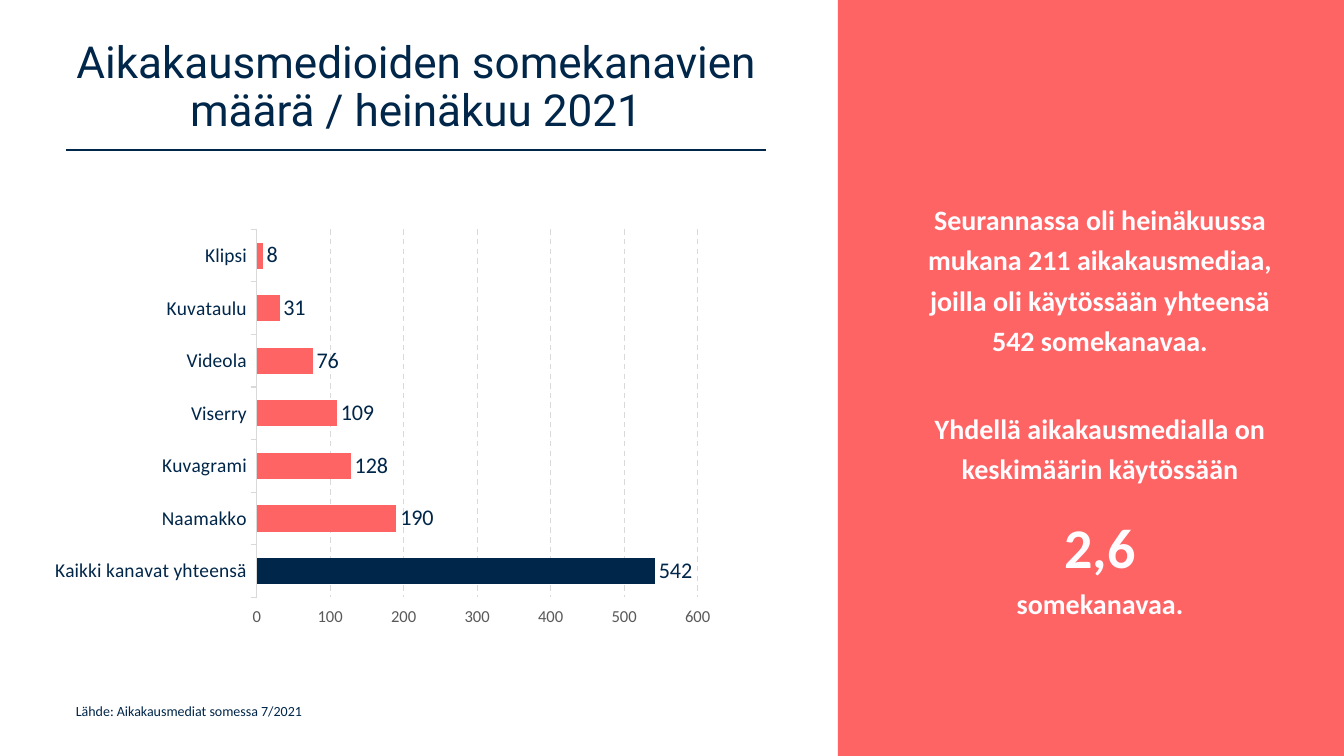
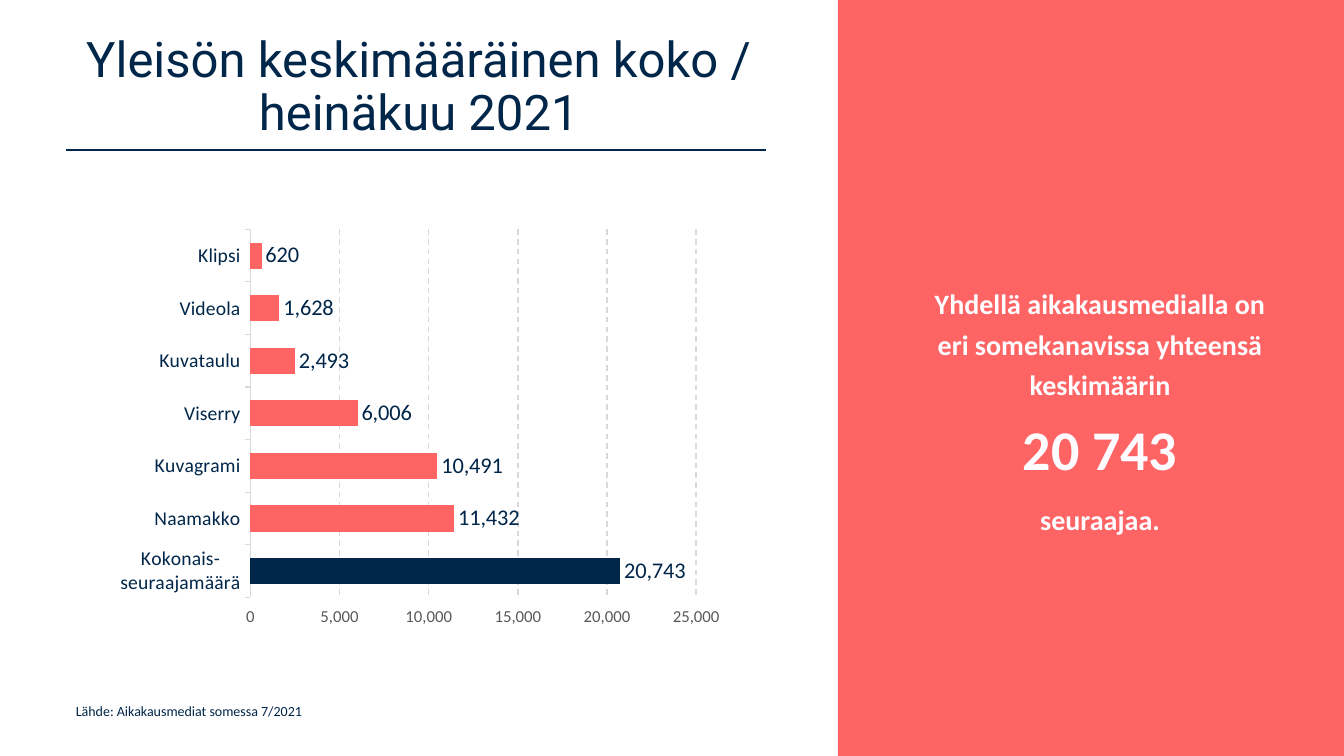
import pptx
import pptx.chart.data
import pptx.dml.color
import pptx.enum.chart
import pptx.enum.dml
import pptx.enum.shapes
import pptx.enum.text
import pptx.oxml.ns
import pptx.oxml.xmlchemy
import pptx.util

NAVY = pptx.dml.color.RGBColor(0x00, 0x26, 0x49)
CORAL = pptx.dml.color.RGBColor(0xFF, 0x64, 0x64)
PALE = pptx.dml.color.RGBColor(0xFE, 0xFC, 0xFF)
GRID = pptx.dml.color.RGBColor(0xD9, 0xD9, 0xD9)
GRAY = pptx.dml.color.RGBColor(0x59, 0x59, 0x59)

SCALE = 914400 / 100.8
PLOT_AREA = {"x": 0.25, "y": 0.09, "w": 0.57, "h": 0.84}
SOURCE = "Lähde: Aikakausmediat somessa 7/2021"


def px(length):
    return round(length * SCALE)


def apply(target, values):
    for name, value in values.items():
        setattr(target, name, value)


def set_font(font, size, color, **values):
    apply(font, {"name": "Calibri", "size": pptx.util.Pt(size), **values})
    font.color.rgb = color


class Report:
    def __init__(self):
        self.deck = pptx.Presentation()
        apply(self.deck, {"slide_width": px(1344), "slide_height": px(756)})
        self.slide = None

    def start_slide(self):
        self.slide = self.deck.slides.add_slide(self.deck.slide_layouts[6])
        self.panel(838, 0, 506, 756)
        self.rule(66, 150, 766)
        self.text(66, 698, 664, 44, [(0, [(SOURCE, 10)])], NAVY)

    def panel(self, left, top, width, height):
        shape = self.slide.shapes.add_shape(
            pptx.enum.shapes.MSO_SHAPE.RECTANGLE, px(left), px(top), px(width), px(height))
        shape.shadow.inherit = False
        shape.fill.solid()
        shape.fill.fore_color.rgb = CORAL
        shape.line.fill.background()

    def rule(self, left, top, right):
        line = self.slide.shapes.add_connector(
            pptx.enum.shapes.MSO_CONNECTOR.STRAIGHT, px(left), px(top), px(right), px(top))
        line.line.color.rgb = NAVY
        line.line.width = pptx.util.Pt(1)
        line._element.spPr.append(pptx.oxml.xmlchemy.OxmlElement("a:effectLst"))

    def text(self, left, top, width, height, paras, color, layout=None, anchor=None, **font):
        box = self.slide.shapes.add_textbox(px(left), px(top), px(width), px(height))
        frame = box.text_frame
        apply(frame, {"word_wrap": True, "vertical_anchor": anchor})
        for index, (space, spans) in enumerate(paras):
            para = frame.add_paragraph() if index else frame.paragraphs[0]
            apply(para, {"space_before": pptx.util.Pt(space), **(layout or {})})
            for words, size in spans:
                for number, part in enumerate(words.split("\n")):
                    if number:
                        para.add_line_break()
                    if part:
                        span = para.add_run()
                        span.text = part
                        set_font(span.font, size, color, **font)

    def centred(self, left, top, width, height, paras, color, spacing, **font):
        layout = {"alignment": pptx.enum.text.PP_ALIGN.CENTER, "line_spacing": spacing}
        self.text(left, top, width, height, paras, color, layout,
                  pptx.enum.text.MSO_ANCHOR.MIDDLE, **font)

    def title(self, left, width, words, size):
        self.centred(left, 25, width, 126, [(0, [(words, size)])], NAVY, 0.9, name="Roboto")

    def message(self, paras):
        self.centred(911, 151, 378, 514, paras, PALE, 1.2, bold=True)

    def bar_chart(self, rows, maximum, step):
        data = pptx.chart.data.CategoryChartData(number_format="#,##0")
        data.categories = [name for name, value in rows]
        data.add_series("Series 1", [value for name, value in rows])
        chart = self.slide.shapes.add_chart(
            pptx.enum.chart.XL_CHART_TYPE.BAR_CLUSTERED,
            px(55), px(190), px(782), px(438), data).chart
        apply(chart, {"has_legend": False, "has_title": False})
        set_font(chart.font, 10, NAVY)
        self.place_plot(chart)
        self.style_axes(chart, maximum, step)
        self.style_bars(chart.plots[0])

    def place_plot(self, chart):
        area = chart._chartSpace.chart.plotArea
        for old in area.findall(pptx.oxml.ns.qn("c:layout")):
            area.remove(old)
        layout = pptx.oxml.xmlchemy.OxmlElement("c:layout")
        manual = pptx.oxml.xmlchemy.OxmlElement("c:manualLayout")
        settings = {"layoutTarget": "inner", "xMode": "edge", "yMode": "edge", **PLOT_AREA}
        for name, value in settings.items():
            setting = pptx.oxml.xmlchemy.OxmlElement("c:" + name)
            setting.set("val", str(value))
            manual.append(setting)
        layout.append(manual)
        area.insert(0, layout)

    def style_axes(self, chart, maximum, step):
        outside = pptx.enum.chart.XL_TICK_MARK.OUTSIDE
        names, values = chart.category_axis, chart.value_axis
        apply(names, {"major_tick_mark": outside, "has_major_gridlines": False})
        names.format.line.color.rgb = GRID
        names.format.line.width = pptx.util.Pt(0.75)
        set_font(names.tick_labels.font, 14, NAVY)
        apply(values, {"major_tick_mark": outside, "has_major_gridlines": True,
                       "minimum_scale": 0, "maximum_scale": maximum, "major_unit": step})
        values.format.line.fill.background()
        grid = values.major_gridlines.format.line
        grid.color.rgb = GRID
        apply(grid, {"width": pptx.util.Pt(1),
                     "dash_style": pptx.enum.dml.MSO_LINE_DASH_STYLE.DASH})
        apply(values.tick_labels, {"number_format": "#,##0", "number_format_is_linked": False})
        set_font(values.tick_labels.font, 12, GRAY)

    def style_bars(self, plot):
        apply(plot, {"gap_width": 100, "vary_by_categories": False, "has_data_labels": True})
        series = plot.series[0]
        for bar, color in ((series, CORAL), (series.points[0], NAVY)):
            bar.format.fill.solid()
            bar.format.fill.fore_color.rgb = color
        labels = plot.data_labels
        apply(labels, {"show_value": True, "number_format": "#,##0",
                       "number_format_is_linked": False,
                       "position": pptx.enum.chart.XL_LABEL_POSITION.OUTSIDE_END})
        set_font(labels.font, 16, NAVY)


def main():
    report = Report()

    report.start_slide()
    report.title(66, 700, "Aikakausmedioiden somekanavien määrä / heinäkuu 2021", 31.5)
    report.message([
        (0, [("Seurannassa oli heinäkuussa mukana 211 aikakausmediaa, "
              "joilla oli käytössään yhteensä 542 somekanavaa.", 20)]),
        (34, [("Yhdellä aikakausmedialla on keskimäärin käytössään", 20)]),
        (10, [("2,6", 40), ("\nsomekanavaa.", 20)]),
    ])
    report.bar_chart([
        ("Kaikki kanavat yhteensä", 542), ("Naamakko", 190), ("Kuvagrami", 128),
        ("Viserry", 109), ("Videola", 76), ("Kuvataulu", 31), ("Klipsi", 8),
    ], 600, 100)

    report.start_slide()
    report.title(0, 838, "Yleisön keskimääräinen koko /\nheinäkuu 2021", 35)
    report.message([
        (0, [("Yhdellä aikakausmedialla on eri somekanavissa yhteensä keskimäärin\n", 20),
             ("20 743", 40)]),
        (10, [("seuraajaa.", 20)]),
    ])
    report.bar_chart([
        ("Kokonais-\nseuraajamäärä", 20743), ("Naamakko", 11432), ("Kuvagrami", 10491),
        ("Viserry", 6006), ("Kuvataulu", 2493), ("Videola", 1628), ("Klipsi", 620),
    ], 25000, 5000)

    report.deck.save("out.pptx")


if __name__ == "__main__":
    main()
